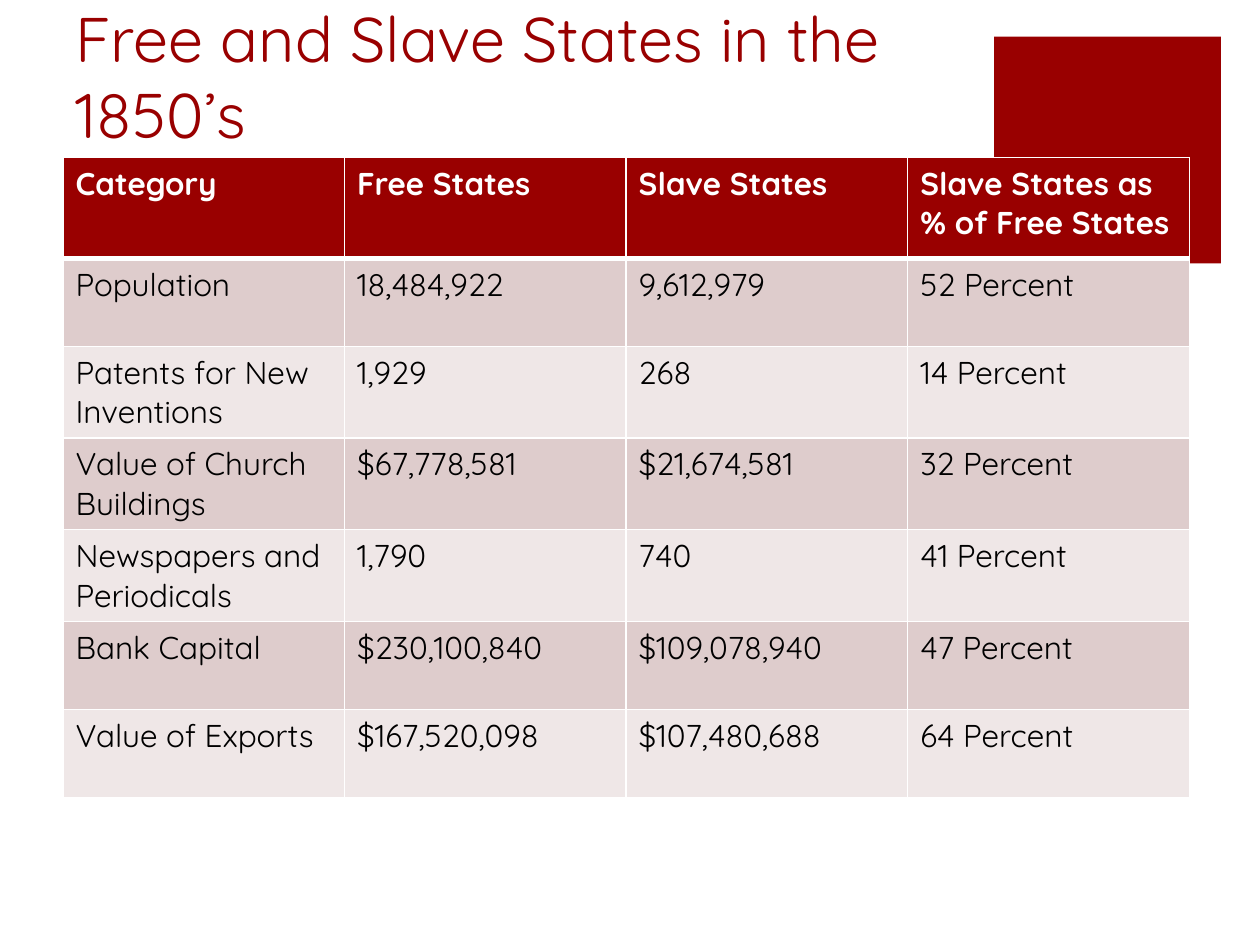
from pptx import Presentation
from pptx.dml.color import RGBColor
from pptx.enum.shapes import MSO_SHAPE
from pptx.enum.text import MSO_ANCHOR, MSO_AUTO_SIZE, PP_ALIGN
from pptx.oxml.ns import qn
from pptx.util import Inches, Pt
from lxml.etree import SubElement

FONT = "Quicksand"
COLORS = {
    "red": "990000",
    "white": "FFFFFF",
    "black": "000000",
    "dark_band": "DECCCC",
    "light_band": "EFE7E7",
}
ROWS = [
    ("Category", "Free States", "Slave States", "Slave States as % of Free States"),
    ("Population", "18,484,922", "9,612,979", "52 Percent"),
    ("Patents for New Inventions", "1,929", "268", "14 Percent"),
    ("Value of Church Buildings", "$67,778,581", "$21,674,581", "32 Percent"),
    ("Newspapers and Periodicals", "1,790", "740", "41 Percent"),
    ("Bank Capital", "$230,100,840", "$109,078,940", "47 Percent"),
    ("Value of Exports", "$167,520,098", "$107,480,688", "64 Percent"),
]
COLUMN_WIDTH = 2.235
HEADER_HEIGHT, ROW_HEIGHT = 0.8, 0.7


def color(name):
    return RGBColor.from_string(COLORS[name])


def format_text(text_frame, size, color_name, bold=False):
    for paragraph in text_frame.paragraphs:
        paragraph.alignment = PP_ALIGN.LEFT
        for run in paragraph.runs:
            run.font.name = FONT
            run.font.size = Pt(size)
            run.font.bold = bold
            run.font.color.rgb = color(color_name)


def add_title(slide, text):
    title = slide.shapes.title
    title.left, title.top = Inches(0.5), Inches(0.52)
    title.width, title.height = Inches(7.12), Inches(0.73)
    text_frame = title.text_frame
    text_frame.text = text
    text_frame.word_wrap = True
    text_frame.auto_size = MSO_AUTO_SIZE.NONE
    text_frame.vertical_anchor = MSO_ANCHOR.BOTTOM
    format_text(text_frame, 36, "red")


def add_corner_square(slide):
    square = slide.shapes.add_shape(
        MSO_SHAPE.RECTANGLE, Inches(7.89), Inches(0.29), Inches(1.8), Inches(1.8))
    square.shadow.inherit = False
    square.fill.solid()
    square.fill.fore_color.rgb = color("red")
    square.line.fill.background()


def set_borders(cell, widths):
    # Border lines must come before the fill in the cell properties
    properties = cell._tc.get_or_add_tcPr()
    for side, width in widths.items():
        line = SubElement(properties, qn(f"a:ln{side}"), w=str(Pt(width)))
        fill = SubElement(line, qn("a:solidFill"))
        SubElement(fill, qn("a:srgbClr"), val=COLORS["white"])


def format_cell(cell, text, row_index):
    header = row_index == 0
    set_borders(cell, {"L": 1, "R": 1, "T": 3 if row_index == 1 else 1,
                       "B": 3 if header else 1})
    band = "dark_band" if row_index % 2 else "light_band"
    cell.fill.solid()
    cell.fill.fore_color.rgb = color("red" if header else band)
    cell.text_frame.text = text
    format_text(cell.text_frame, 18, "white" if header else "black", bold=header)


def add_state_table(slide):
    column_count = len(ROWS[0])
    height = HEADER_HEIGHT + ROW_HEIGHT * (len(ROWS) - 1)
    table = slide.shapes.add_table(
        len(ROWS), column_count, Inches(0.5), Inches(1.25),
        Inches(COLUMN_WIDTH * column_count), Inches(height)).table
    for column in table.columns:
        column.width = Inches(COLUMN_WIDTH)
    for row_index, values in enumerate(ROWS):
        table.rows[row_index].height = Inches(ROW_HEIGHT if row_index else HEADER_HEIGHT)
        for column_index, text in enumerate(values):
            format_cell(table.cell(row_index, column_index), text, row_index)


def main():
    presentation = Presentation()
    presentation.slide_width = Inches(10)
    presentation.slide_height = Inches(7.5)
    slide = presentation.slides.add_slide(presentation.slide_layouts[5])
    # The square lies behind the table
    add_corner_square(slide)
    add_title(slide, "Free and Slave States in the 1850’s")
    add_state_table(slide)
    presentation.save("out.pptx")


if __name__ == "__main__":
    main()
